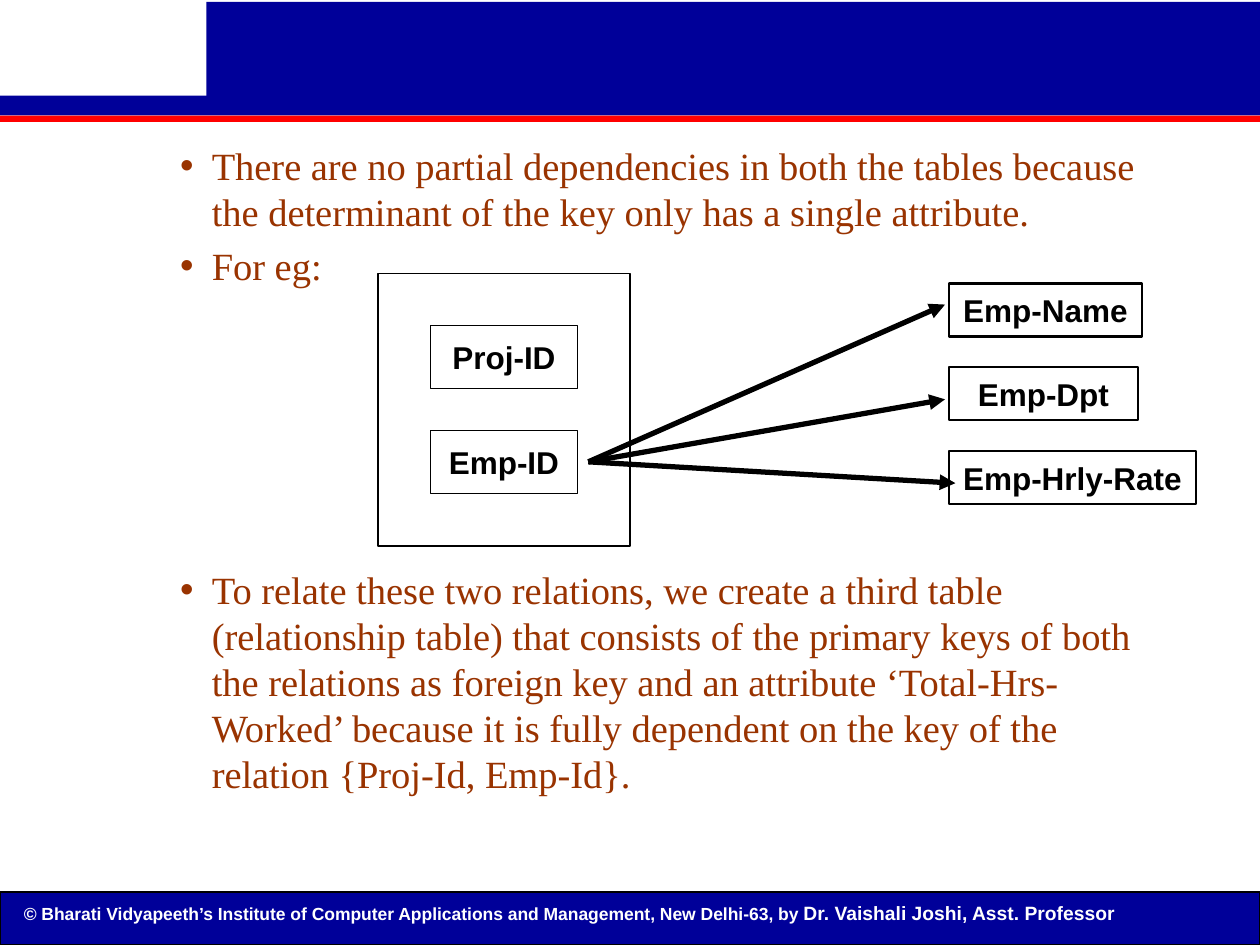
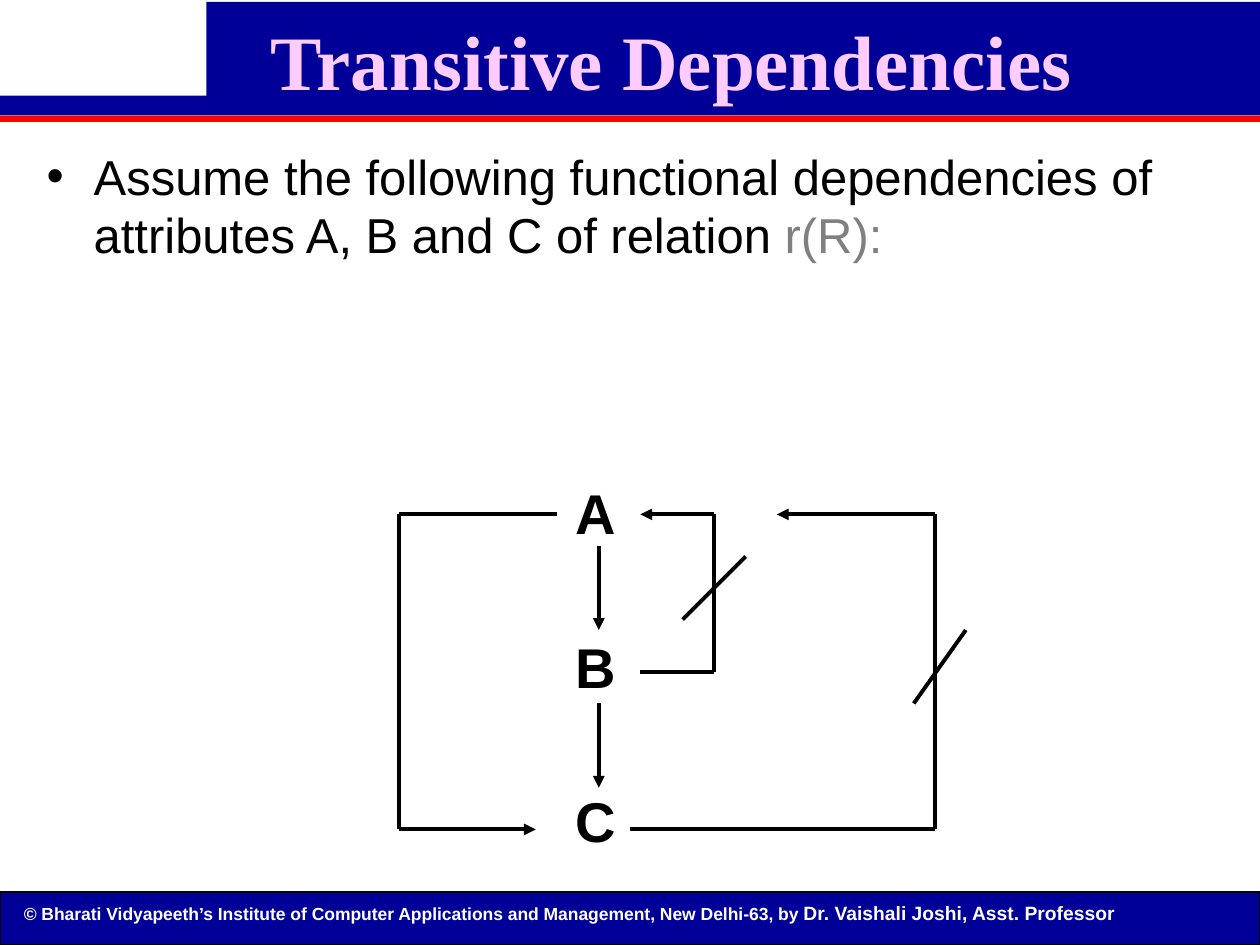
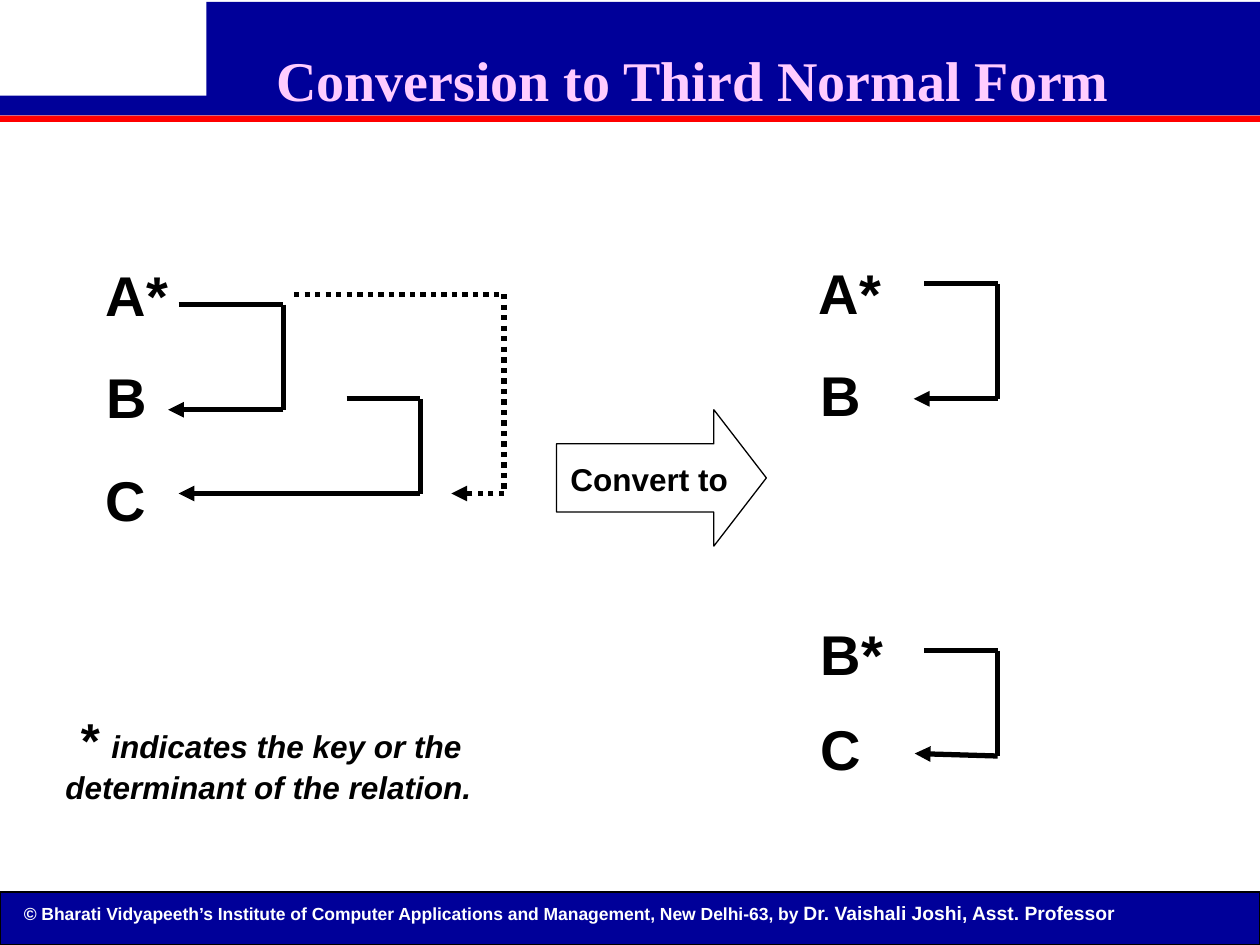
from lxml import etree
from pptx import Presentation
from pptx import util as u
from pptx.dml.color import RGBColor
from pptx.enum import dml, shapes, text
from pptx.oxml import ns

SANS, SERIF = "Arial", "Times New Roman"
NAVY, RED, PINK, BROWN = "000099", "FF0000", "FFCCFF", "993300"
BLACK, WHITE, GREY = "000000", "FFFFFF", "808080"
RECT = shapes.MSO_SHAPE.RECTANGLE
ARROW = shapes.MSO_SHAPE.RIGHT_ARROW
MIDDLE = text.MSO_ANCHOR.MIDDLE
CENTER = text.PP_ALIGN.CENTER


def paint(colour, value):
    colour.rgb = RGBColor.from_string(value)


def lengths(*values):
    return [u.Cm(value) for value in values]


class Deck:
    def __init__(self):
        self.prs = Presentation()
        self.prs.slide_width, self.prs.slide_height = lengths(25.4, 19.05)
        self.slide = None

    def page(self, title=None, size=44, left=0, top=0):
        self.slide = self.prs.slides.add_slide(self.prs.slide_layouts[5 if title else 6])
        if title:
            heading = self.slide.shapes.title
            heading.left, heading.top, heading.width, heading.height = lengths(left, top, 22.86, 3.18)
            frame = heading.text_frame
            frame.text = title
            frame.auto_size = text.MSO_AUTO_SIZE.NONE
            frame.vertical_anchor = text.MSO_ANCHOR.TOP
            frame.margin_top = u.Cm(0.27)
            frame.paragraphs[0].alignment = CENTER
            self.style(frame.paragraphs[0].runs[0], size, SERIF, PINK, bold=True)

    def share(self):
        master = self.prs.slide_master.shapes
        for shape in list(self.slide.shapes):
            master._spTree.append(shape._element)

    def style(self, run, size, font=SANS, colour=BLACK, bold=False, italic=False):
        run.font.size, run.font.name = u.Pt(size), font
        run.font.bold, run.font.italic = bold, italic
        paint(run.font.color, colour)

    def add_runs(self, paragraph, pieces):
        for words, look in pieces:
            run = paragraph.add_run()
            run.text = words
            self.style(run, **look)

    def shape(self, at, kind=RECT, fill=None, line=None):
        shape = self.slide.shapes.add_shape(kind, *lengths(*at))
        shape.shadow.inherit = False
        if fill:
            shape.fill.solid()
            paint(shape.fill.fore_color, fill)
        else:
            shape.fill.background()
        if line:
            paint(shape.line.color, BLACK)
            shape.line.width = u.Pt(line)
        else:
            shape.line.fill.background()
        return shape

    def box(self, words, at, line):
        frame = self.shape(at, line=line).text_frame
        frame.word_wrap = False
        frame.vertical_anchor = MIDDLE
        frame.text = words
        frame.paragraphs[0].alignment = CENTER
        self.style(frame.paragraphs[0].runs[0], 18, bold=True)

    def textbox(self, at, *pieces, wrap=True, indent=0):
        frame = self.slide.shapes.add_textbox(*lengths(*at)).text_frame
        frame.word_wrap = wrap
        paragraph = frame.paragraphs[0]
        if indent:
            paragraph._p.get_or_add_pPr().set("indent", str(u.Cm(indent)))
        self.add_runs(paragraph, pieces)

    def label(self, words, left, top, width=1.78, height=1.6, size=32):
        self.textbox((left, top, width, height), (words, dict(size=size, bold=True)), wrap=False)

    def bullets(self, at, items, margin, hang):
        frame = self.slide.shapes.add_textbox(*lengths(*at)).text_frame
        frame.word_wrap = True
        for number, pieces in enumerate(items):
            paragraph = frame.add_paragraph() if number else frame.paragraphs[0]
            props = paragraph._p.get_or_add_pPr()
            props.set("marL", str(u.Cm(margin)))
            props.set("indent", str(-u.Cm(hang)))
            etree.SubElement(props, ns.qn("a:buFont")).set("typeface", SANS)
            etree.SubElement(props, ns.qn("a:buChar")).set("char", "•")
            if number:
                paragraph.space_before = u.Pt(4.4)
            self.add_runs(paragraph, pieces)

    def wire(self, *points, weight, arrow=True, dash=None):
        for start, end in zip(points, points[1:]):
            line = self.slide.shapes.add_connector(
                shapes.MSO_CONNECTOR.STRAIGHT, *lengths(*start, *end))
            paint(line.line.color, BLACK)
            line.line.width = u.Pt(weight)
            if dash:
                line.line.dash_style = dash
            props = line._element.spPr
            if arrow and end == points[-1]:
                outline = props.find(ns.qn("a:ln"))
                etree.SubElement(outline, ns.qn("a:tailEnd")).set("type", "triangle")
            etree.SubElement(props, ns.qn("a:effectLst"))


def shared_bands(deck):
    deck.shape((0, 1.93, 25.4, 0.4), fill=NAVY)
    deck.shape((0, 2.33, 25.4, 0.13), fill=RED)
    deck.shape((4.16, 0.04, 21.24, 1.92), fill=NAVY)
    deck.shape((0, 17.98, 25.4, 1.07), fill=NAVY, line=0.75)
    credit = dict(colour=WHITE, bold=True)
    deck.textbox(
        (0.23, 18.05, 24.33, 0.74),
        ("© Bharati Vidyapeeth’s Institute of Computer Applications and Management, "
         "New Delhi-63, by", dict(size=10, **credit)),
        (" Dr. Vaishali Joshi, Asst. Professor", dict(size=11, **credit)))
    deck.share()


def partial_dependencies(deck):
    body = dict(size=22, font=SERIF, colour=BROWN)
    before = [
        "There are no partial dependencies in both the tables because the determinant "
        "of the key only has a single attribute.",
        "For eg:"]
    after = [
        "To relate these two relations, we create a third table (relationship table) that "
        "consists of the primary keys of both the relations as foreign key and an attribute "
        "‘Total-Hrs-Worked’ because it is fully dependent on the key of the relation "
        "{Proj-Id, Emp-Id}."]
    for top, height, items in ((2.74, 3.4, before), (11.28, 6.07, after)):
        deck.bullets((0.84, top, 22.86, height), [[(item, body)] for item in items], 3.18, 0.64)

    deck.shape((7.62, 5.51, 5.08, 5.5), line=0.75)
    for row, key in enumerate(("Proj-ID", "Emp-ID")):
        deck.box(key, (8.68, 6.56 + row * 2.12, 2.96, 1.27), 0.75)
    for tip in ((19.05, 6.14), (19.05, 8.05), (19.26, 9.74)):
        deck.wire((11.86, 9.31), tip, weight=3)
    attributes = (("Emp-Name", 3.89), ("Emp-Dpt", 3.81), ("Emp-Hrly-Rate", 4.98))
    for row, (attribute, width) in enumerate(attributes):
        deck.box(attribute, (19.13, 5.71 + row * 1.69, width, 1.07), 1.5)


def transitive_dependencies(deck):
    deck.page("Transitive Dependencies", 44, 2.11, 0)
    deck.bullets((0.69, 2.82, 24.18, 3), [[
        ("Assume the following functional dependencies of attributes A, B and C of relation ",
         dict(size=28)),
        ("r(R):", dict(size=28, colour=GREY))]], 0.95, 0.95)
    for row, attribute in enumerate("ABC"):
        deck.label(attribute, 11.36, 9.52 + row * 3.11, 1.32)
    for top in (11, 14.18):
        deck.wire((12.07, top), (12.07, top + 1.7), weight=2.25)
    a_row, b_row, c_row = 10.37, 13.55, 16.72
    deck.wire((12.7, c_row), (18.84, c_row), (18.84, a_row), (15.66, a_row), weight=2.25)
    deck.wire((12.91, b_row), (14.39, b_row), (14.39, a_row), (12.91, a_row), weight=2.25)
    deck.wire((11.22, a_row), (8.04, a_row), (8.04, c_row), (10.8, c_row), weight=2.25)
    deck.wire((18.42, 14.18), (19.47, 12.7), weight=2.25, arrow=False)
    deck.wire((13.76, 12.49), (15.03, 11.22), weight=2.25, arrow=False)


def third_normal_form(deck):
    deck.page("Conversion to Third Normal Form", 32, 2.54, 0.64)
    for attribute, left, top, width in (
            ("A*", 1.88, 5.13, 1.78), ("B", 1.9, 7.19, 1.32), ("C", 1.88, 9.25, 1.32),
            ("A*", 16.26, 5.08, 1.78), ("B", 16.3, 7.14, 1.32),
            ("B*", 16.3, 12.37, 1.78), ("C", 16.3, 14.27, 1.32)):
        deck.label(attribute, left, top, width)
    deck.wire((5.93, 5.93), (10.16, 5.93), (10.16, 9.95), (9.1, 9.95), weight=3,
              dash=dml.MSO_LINE.ROUND_DOT)
    for route in (
            ((3.6, 6.14), (5.71, 6.14), (5.71, 8.26), (3.39, 8.26)),
            ((6.99, 8.04), (8.47, 8.04), (8.47, 9.95), (3.6, 9.95)),
            ((18.63, 5.72), (20.11, 5.72), (20.11, 8.04), (18.42, 8.04)),
            ((18.63, 13.12), (20.11, 13.12), (20.11, 15.24), (18.44, 15.19))):
        deck.wire(*route, weight=3)
    conversion = deck.shape((11.22, 8.26, 4.23, 2.75), ARROW, line=0.75)
    conversion.adjustments[1] = 0.385
    deck.label("Convert to", 11.25, 9.14, 3.68, 1.02, 18)
    note = dict(bold=True, italic=True)
    deck.textbox((1.07, 14.17, 11.86, 2.24), ("* ", dict(size=28, **note)),
                 ("indicates the key or the determinant of the relation.", dict(size=18, **note)),
                 indent=0.27)


def main():
    deck = Deck()
    deck.page()
    shared_bands(deck)
    partial_dependencies(deck)
    transitive_dependencies(deck)
    third_normal_form(deck)
    deck.prs.save("out.pptx")


if __name__ == "__main__":
    main()
